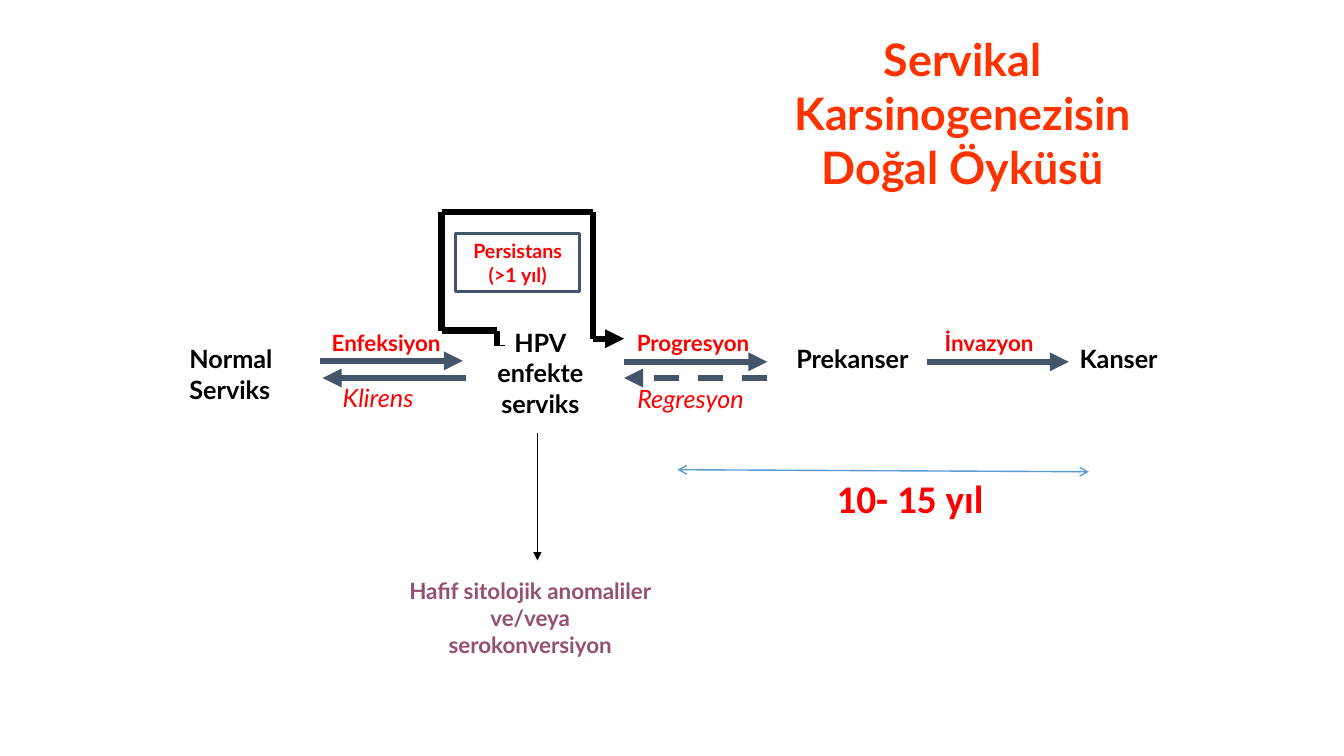
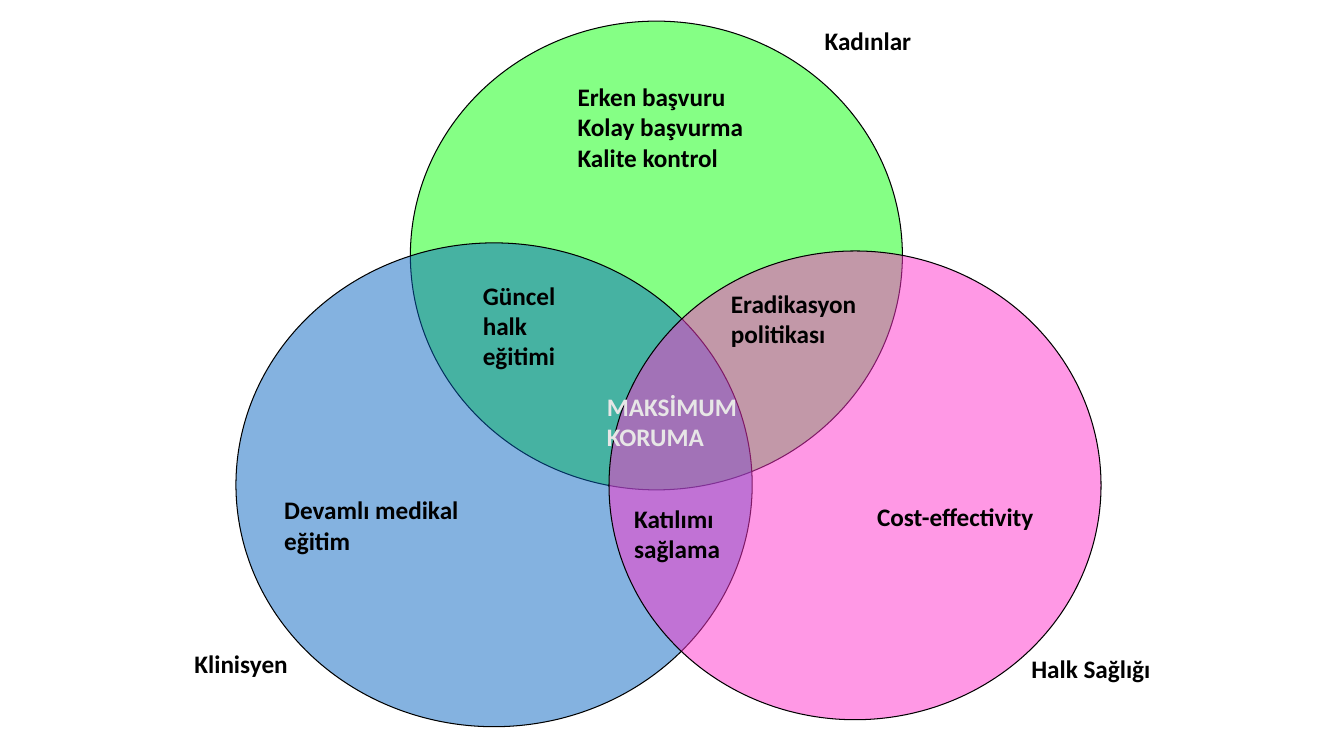
from itertools import pairwise

from lxml import etree
from pptx import Presentation
from pptx.dml.color import RGBColor
from pptx.enum import dml, shapes, text
from pptx.oxml import ns
from pptx.util import Inches, Pt

BLACK = RGBColor(0x00, 0x00, 0x00)
RED = RGBColor(0xFF, 0x00, 0x00)
ORANGE = RGBColor(0xFF, 0x33, 0x00)
PLUM = RGBColor(0x95, 0x4F, 0x72)
SLATE = RGBColor(0x44, 0x54, 0x6A)
SKY = RGBColor(0x5B, 0x9B, 0xD5)
GREEN = RGBColor(0x00, 0xFF, 0x00)
BLUE = RGBColor(0x05, 0x63, 0xC1)
PINK = RGBColor(0xFF, 0x33, 0xCC)
PALE = RGBColor(0xE7, 0xE6, 0xE6)

LATO = "Lato"
CALIBRI = "Calibri"
LEFT = text.PP_ALIGN.LEFT
CENTER = text.PP_ALIGN.CENTER


def write(sp, lines, font, size, color, align, bold=True, italic=False):
    tf = sp.text_frame
    tf.word_wrap = False
    tf.auto_size = text.MSO_AUTO_SIZE.SHAPE_TO_FIT_TEXT
    tf.text = "\n".join(lines)
    for p in tf.paragraphs:
        p.alignment = align
        p.font.name = font
        p.font.size = Pt(size)
        p.font.bold = bold
        p.font.italic = italic
        p.font.color.rgb = color


def add_label(s, box, lines, font=LATO, size=18, color=BLACK, align=CENTER, **style):
    sp = s.shapes.add_textbox(*map(Inches, box))
    write(sp, lines, font, size, color, align, **style)
    return sp


def add_line(s, start, end, color, width, head=None, tail=None, dash=None):
    c = s.shapes.add_connector(
        shapes.MSO_CONNECTOR.STRAIGHT, *map(Inches, (*start, *end)))
    c.line.color.rgb = color
    c.line.width = Pt(width)
    if dash:
        c.line.dash_style = dash
    spPr = c._element.spPr
    ln = spPr.find(ns.qn("a:ln"))
    for tag, kind in (("a:headEnd", head), ("a:tailEnd", tail)):
        if kind:
            etree.SubElement(ln, ns.qn(tag), type=kind)
    etree.SubElement(spPr, ns.qn("a:effectLst"))


def add_outlined(s, kind, box, color, width):
    sp = s.shapes.add_shape(kind, *map(Inches, box))
    sp.shadow.inherit = False
    sp.line.color.rgb = color
    sp.line.width = Pt(width)
    return sp


def add_circle(s, box, color, opacity):
    sp = add_outlined(s, shapes.MSO_SHAPE.OVAL, box, BLACK, 0.75)
    sp.fill.solid()
    sp.fill.fore_color.rgb = color
    clr = sp._element.spPr.find(ns.qn("a:solidFill"))[0]
    etree.SubElement(clr, ns.qn("a:alpha"), val=str(opacity * 1000))


def add_persistence_loop(s):
    points = [(4.93, 3.43), (4.93, 3.28), (4.38, 3.28), (4.38, 2.1),
              (5.88, 2.1), (5.88, 3.36), (6.19, 3.36)]
    for start, end in pairwise(points):
        tail = "triangle" if end == points[-1] else None
        add_line(s, start, end, BLACK, 4.5, tail=tail)
    add_line(s, points[0], (5.01, 3.43), BLACK, 0.75)
    sp = add_outlined(s, shapes.MSO_SHAPE.RECTANGLE, (4.52, 2.32, 1.23, 0.57), SLATE, 2.25)
    sp.fill.background()
    write(sp, ["Persistans", "(>1 yıl)"], LATO, 14, RED, CENTER)


def build_history(s):
    add_label(s, (1.78, 3.36, 1.12, 0.7), ["Normal", "Serviks"], align=LEFT)
    for box, lines in (
        ((4.78, 3.2, 1.16, 1), ["HPV", "enfekte", "serviks"]),
        ((7.72, 3.36, 1.47, 0.4), ["Prekanser"]),
        ((10.56, 3.36, 1.07, 0.4), ["Kanser"]),
    ):
        add_label(s, box, lines)

    for left, width, name in (
        (3.12, 1.42, "Enfeksiyon"), (6.14, 1.47, "Progresyon"), (9.19, 1.24, "İnvazyon"),
    ):
        add_label(s, (left, 3.22, width, 0.37), [name], size=16, color=RED)
    for box, name in (
        ((3.28, 3.74, 0.94, 0.4), "Klirens"), ((6.17, 3.75, 1.36, 0.4), "Regresyon"),
    ):
        add_label(s, box, [name], color=RED, bold=False, italic=True)

    for x1, x2, y, dash in (
        (3.17, 4.59, 3.58, None),
        (4.62, 3.2, 3.75, None),
        (6.19, 7.61, 3.59, None),
        (7.61, 6.19, 3.75, dml.MSO_LINE.DASH),
        (9.19, 10.6, 3.59, None),
    ):
        add_line(s, (x1, y), (x2, y), SLATE, 4.5, tail="triangle", dash=dash)

    add_persistence_loop(s)
    add_label(s, (7.53, 0.27, 4.04, 1.72),
              ["Servikal", "Karsinogenezisin", "Doğal Öyküsü"], size=32, color=ORANGE)
    add_line(s, (5.33, 4.3), (5.33, 5.56), BLACK, 0.75, tail="triangle")
    add_label(s, (3.78, 5.68, 2.96, 0.9),
              ["Hafif sitolojik anomaliler", "ve/veya", "serokonversiyon"],
              size=16, color=PLUM)
    add_line(s, (6.72, 4.66), (10.8, 4.68), SKY, 1, head="arrow", tail="arrow")
    period = add_label(s, (7.39, 4.53, 3.27, 0.82), ["10- 15 yıl"], CALIBRI, 28, RED)
    period.text_frame.auto_size = text.MSO_AUTO_SIZE.NONE
    period.text_frame.word_wrap = True
    period.text_frame.vertical_anchor = text.MSO_ANCHOR.MIDDLE


def build_venn(s):
    add_circle(s, (4.07, 0.21, 4.88, 4.65), GREEN, 48)
    add_circle(s, (2.34, 2.41, 5.12, 4.8), BLUE, 49)
    add_circle(s, (6.04, 2.49, 4.88, 4.65), PINK, 50)
    for box, lines, color in (
        ((5.63, 0.76, 1.9, 1), ["Erken başvuru", "Kolay başvurma", "Kalite kontrol"], BLACK),
        ((2.72, 4.86, 2.08, 0.7), ["Devamlı medikal", "eğitim"], BLACK),
        ((8.6, 4.92, 1.81, 0.4), ["Cost-effectivity"], BLACK),
        ((4.69, 2.73, 0.96, 1), ["Güncel", "halk", "eğitimi"], BLACK),
        ((7.15, 2.81, 1.45, 0.71), ["Eradikasyon", "politikası"], BLACK),
        ((6.19, 4.94, 1.08, 0.7), ["Katılımı", "sağlama"], BLACK),
        ((5.92, 3.83, 1.5, 0.71), ["MAKSİMUM", "KORUMA"], PALE),
        ((1.83, 6.38, 1.13, 0.4), ["Klinisyen"], BLACK),
        ((10.13, 6.43, 1.39, 0.4), ["Halk Sağlığı"], BLACK),
        ((8.08, 0.2, 1.07, 0.4), ["Kadınlar"], BLACK),
    ):
        add_label(s, box, lines, CALIBRI, color=color, align=LEFT)


def main():
    prs = Presentation()
    prs.slide_width = Inches(13.33)
    prs.slide_height = Inches(7.5)
    for build in (build_history, build_venn):
        build(prs.slides.add_slide(prs.slide_layouts[6]))
    prs.save("out.pptx")


if __name__ == "__main__":
    main()
